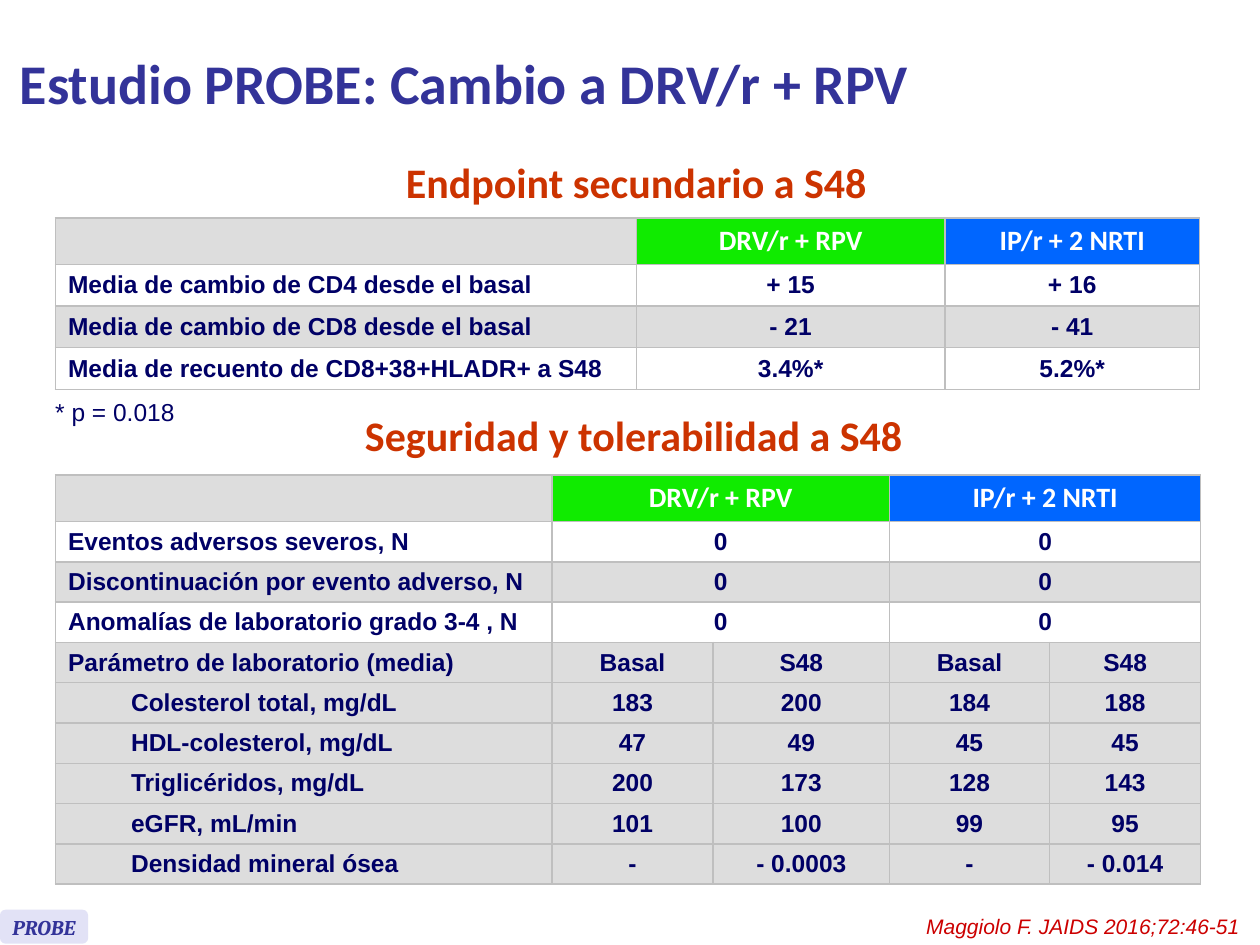
import lxml.etree
import pptx
import pptx.dml.color
import pptx.enum.shapes
import pptx.enum.text
import pptx.oxml.ns
import pptx.util

Inches = pptx.util.Inches
RGBColor = pptx.dml.color.RGBColor
ALIGN = pptx.enum.text.PP_ALIGN
MIDDLE = pptx.enum.text.MSO_ANCHOR.MIDDLE

WHITE = RGBColor(0xFF, 0xFF, 0xFF)
GREY = RGBColor(0xDD, 0xDD, 0xDD)
GREEN = RGBColor(0x10, 0xEB, 0x00)
BLUE = RGBColor(0x00, 0x66, 0xFF)
NAVY = RGBColor(0x00, 0x00, 0x66)
INDIGO = RGBColor(0x33, 0x33, 0x99)
LAVENDER = RGBColor(0xE2, 0xE2, 0xF6)
ORANGE = RGBColor(0xCC, 0x33, 0x00)
RED = RGBColor(0xCC, 0x00, 0x00)
BORDER = RGBColor(0xBF, 0xBF, 0xBF)

TITLE = {"name": "Calibri", "size": 32, "bold": True, "color": INDIGO}
HEADING = {"name": "Calibri", "size": 24, "bold": True, "color": ORANGE}
HEADER = {"name": "Calibri", "size": 16, "bold": True, "color": WHITE}
BODY = {"name": "Arial", "size": 14, "bold": True, "color": NAVY}
NOTE = {"name": "Arial", "size": 14, "color": NAVY}
CITATION = {"name": "Arial", "size": 12, "italic": True, "color": RED}
BADGE = {"name": "Cambria", "size": 12, "bold": True, "italic": True, "color": INDIGO}

ARMS = ["", "DRV/r + RPV", "IP/r + 2 NRTI"]
ENDPOINT_ROWS = [
    ARMS,
    ["Media de cambio de CD4 desde el basal", "+ 15", "+ 16"],
    ["Media de cambio de CD8 desde el basal", "- 21", "- 41"],
    ["Media de recuento de CD8+38+HLADR+ a S48", "3.4%*", "5.2%*"],
]
SAFETY_ROWS = [
    ARMS,
    ["Eventos adversos severos, N", "0", "0"],
    ["Discontinuación por evento adverso, N", "0", "0"],
    ["Anomalías de laboratorio grado 3-4 , N", "0", "0"],
    ["Parámetro de laboratorio (media)", "Basal", "S48", "Basal", "S48"],
    ["Colesterol total, mg/dL", "183", "200", "184", "188"],
    ["HDL-colesterol, mg/dL", "47", "49", "45", "45"],
    ["Triglicéridos, mg/dL", "200", "173", "128", "143"],
    ["eGFR, mL/min", "101", "100", "99", "95"],
    ["Densidad mineral ósea", "-", "- 0.0003", "-", "- 0.014"],
]


def write_text(frame, text, style, align):
    """Write one styled paragraph into a text frame and return it."""
    para = frame.paragraphs[0]
    para.alignment = align
    span = para.add_run()
    span.text = text
    for name, value in style.items():
        if name == "color":
            span.font.color.rgb = value
        else:
            setattr(span.font, name, pptx.util.Pt(value) if name == "size" else value)
    return para


def add_text(page, box, text, style, align=ALIGN.LEFT, **frame_format):
    """Place a text box and return its paragraph."""
    frame = page.shapes.add_textbox(*map(Inches, box)).text_frame
    for name, value in {"word_wrap": True, **frame_format}.items():
        setattr(frame, name, value)
    return write_text(frame, text, style, align)


def add_heading(page, box, text):
    """Place a centred section heading with tight line spacing."""
    para = add_text(page, box, text, HEADING, ALIGN.CENTER)
    para.line_spacing = pptx.util.Pt(15.2)


def add_badge(page, box, text):
    """Place the rounded study badge."""
    badge = page.shapes.add_shape(
        pptx.enum.shapes.MSO_SHAPE.ROUNDED_RECTANGLE, *map(Inches, box))
    badge.shadow.inherit = False
    badge.fill.solid()
    badge.fill.fore_color.rgb = LAVENDER
    badge.line.fill.background()
    badge.text_frame.word_wrap = False
    badge.text_frame.vertical_anchor = MIDDLE
    write_text(badge.text_frame, text, BADGE, ALIGN.CENTER)


def format_cell(cell, fill):
    """Give a cell its borders, fill and margins."""
    properties = cell._tc.get_or_add_tcPr()
    for side in ("a:lnL", "a:lnR", "a:lnT", "a:lnB"):
        line = lxml.etree.SubElement(properties, pptx.oxml.ns.qn(side), w="12700")
        solid = lxml.etree.SubElement(line, pptx.oxml.ns.qn("a:solidFill"))
        lxml.etree.SubElement(solid, pptx.oxml.ns.qn("a:srgbClr"), val=str(BORDER))
    cell.fill.solid()
    cell.fill.fore_color.rgb = fill
    cell_format = {"margin_top": Inches(0.03), "margin_bottom": Inches(0.03),
                   "vertical_anchor": MIDDLE}
    for name, value in cell_format.items():
        setattr(cell, name, value)


def add_results_table(page, box, widths, rows, row_height, first_indented=None):
    """Place a results table, spreading short rows over merged columns."""
    count = len(widths)
    table = page.shapes.add_table(len(rows), count, *map(Inches, box)).table
    for column, width in zip(table.columns, widths):
        column.width = Inches(width)
    for index, values in enumerate(rows):
        table.rows[index].height = Inches(row_height if index else 0.37)
        merged = (count - 1) // (len(values) - 1)
        for column in range(count):
            arm = (column + 1) // 2 if count > 3 else column
            fill = WHITE if index in (1, 3) else GREY
            format_cell(table.cell(index, column), fill if index else (GREY, GREEN, BLUE)[arm])
        for position, text in enumerate(values):
            column = 1 + (position - 1) * merged if position else 0
            cell = table.cell(index, column)
            if position and merged > 1:
                cell.merge(table.cell(index, column + merged - 1))
            para = write_text(cell.text_frame, text, BODY if index else HEADER,
                              ALIGN.CENTER if position else ALIGN.LEFT)
            if first_indented and index >= first_indented and not position:
                para.level = 1
                para._p.get_or_add_pPr().set("marL", str(Inches(0.5)))


def build_page(page):
    """Place every region of the study slide."""
    add_results_table(page, (0.44, 3.77, 9.09, 3.25), (3.94, 1.28, 1.4, 1.27, 1.2),
                      SAFETY_ROWS, 0.32, first_indented=5)
    add_heading(page, (2.44, 3.39, 5.18, 0.35), "Seguridad y tolerabilidad a S48")
    add_results_table(page, (0.44, 1.73, 9.09, 1.37), (4.61, 2.45, 2.02),
                      ENDPOINT_ROWS, 0.33)
    add_heading(page, (2.74, 1.38, 4.62, 0.35), "Endpoint secundario a S48")
    add_text(page, (0.34, 3.1, 1.16, 0.34), "* p = 0.018", NOTE, word_wrap=False)
    add_text(page, (5.48, 7.2, 4.51, 0.3), "Maggiolo F. JAIDS 2016;72:46-51",
             CITATION, ALIGN.RIGHT, margin_right=Inches(0.15))
    add_badge(page, (0, 7.22, 0.7, 0.27), "PROBE")
    add_text(page, (0.06, 0.05, 8.96, 1.21), "Estudio PROBE: Cambio a DRV/r + RPV",
             TITLE, vertical_anchor=MIDDLE)


def main():
    """Build and save the deck."""
    deck = pptx.Presentation()
    deck.slide_width, deck.slide_height = Inches(10), Inches(7.5)
    build_page(deck.slides.add_slide(deck.slide_layouts[6]))
    deck.save("out.pptx")


if __name__ == "__main__":
    main()
